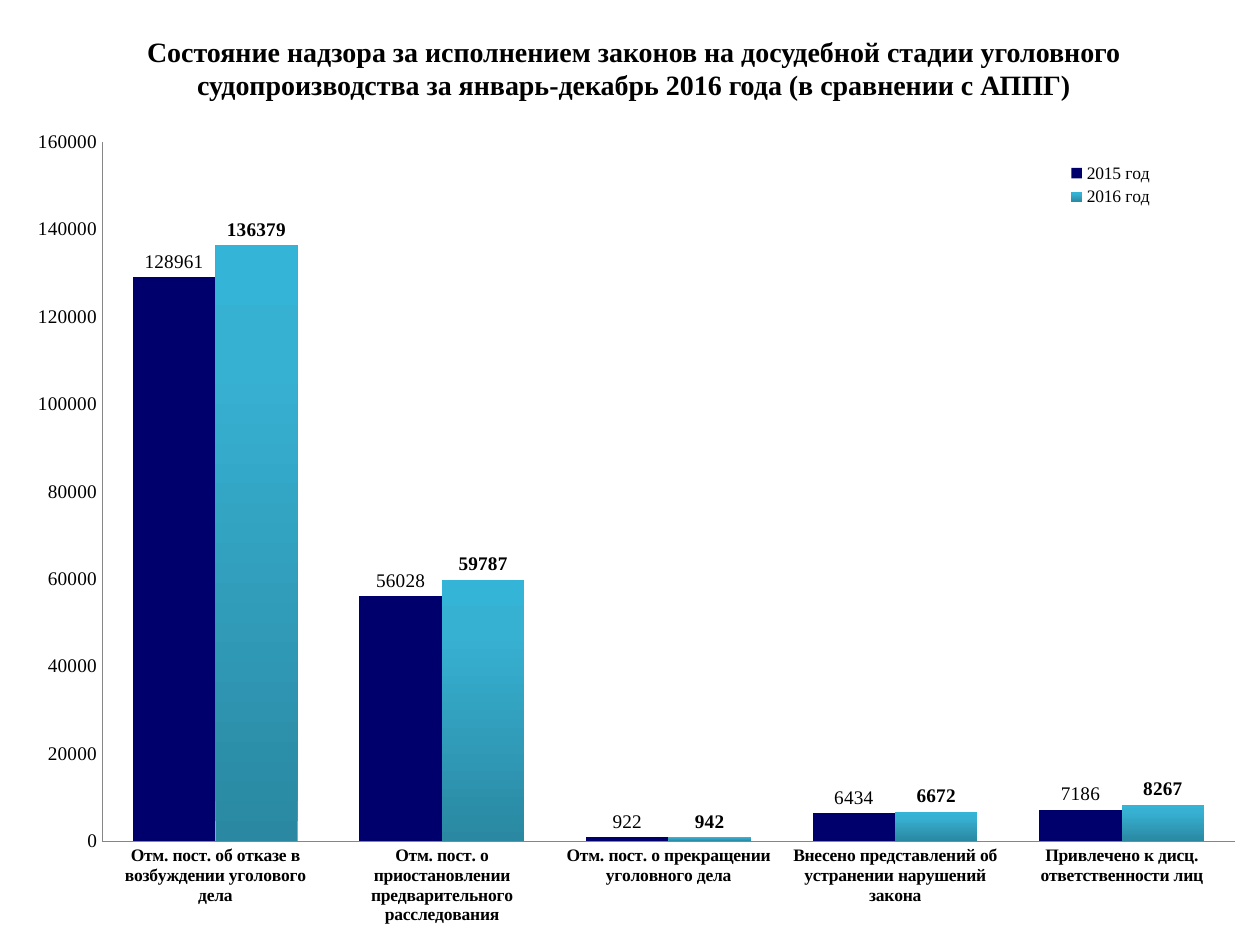
"""Builds a one-slide report comparing 2015 and 2016 supervision figures."""
from copy import deepcopy

from lxml import etree
from pptx import Presentation
from pptx.chart.data import CategoryChartData
from pptx.dml.color import RGBColor
from pptx.enum.chart import XL_CHART_TYPE, XL_LABEL_POSITION, XL_LEGEND_POSITION, XL_TICK_MARK
from pptx.enum.text import MSO_ANCHOR, MSO_AUTO_SIZE, PP_ALIGN
from pptx.oxml.ns import qn
from pptx.util import Cm, Pt

COLUMNS = XL_CHART_TYPE.COLUMN_CLUSTERED
OUTSIDE = XL_LABEL_POSITION.OUTSIDE_END
LEGEND_RIGHT = XL_LEGEND_POSITION.RIGHT
NO_TICKS = XL_TICK_MARK.NONE
TOP = MSO_ANCHOR.TOP
NO_AUTOFIT = MSO_AUTO_SIZE.NONE
CENTER = PP_ALIGN.CENTER

FONT = "Times New Roman"
COLORS = {
    "text": "000000",
    "axis": "868686",
    "2015": "00006C",
    "2016 bottom": "2A88A2",
    "2016 middle": "37B1D2",
    "2016 top": "34B4D6",
}
TITLE = (
    "Состояние надзора за исполнением законов на досудебной стадии уголовного "
    "судопроизводства за январь-декабрь 2016 года (в сравнении с АППГ)"
)
CATEGORIES = [
    "Отм. пост. об отказе в возбуждении уголового дела",
    "Отм. пост. о приостановлении предварительного расследования",
    "Отм. пост. о прекращении уголовного дела",
    "Внесено представлений об устранении нарушений закона",
    "Привлечено к дисц. ответственности лиц",
]
SERIES = {
    "2015 год": [128961, 56028, 922, 6434, 7186],
    "2016 год": [136379, 59787, 942, 6672, 8267],
}


def color(name):
    return RGBColor.from_string(COLORS[name])


class SlideBuilder:
    """Holds the text style and the current slide."""

    def __init__(self, presentation):
        self.slide = presentation.slides.add_slide(presentation.slide_layouts[5])

    def style(self, font, size, bold=False):
        font.name = FONT
        font.size = Pt(size)
        font.bold = bold
        font.color.rgb = color("text")

    def title(self, text, left, top, width, height):
        shape = self.slide.shapes.title
        shape.left, shape.top, shape.width, shape.height = map(Cm, (left, top, width, height))
        frame = shape.text_frame
        frame.text = text
        frame.word_wrap = True
        frame.auto_size = NO_AUTOFIT
        frame.vertical_anchor = TOP
        paragraph = frame.paragraphs[0]
        paragraph.alignment = CENTER
        self.style(paragraph.font, 16, bold=True)

    def column_chart(self, categories, series, left, top, width, height):
        data = CategoryChartData()
        data.categories = categories
        for name, values in series.items():
            data.add_series(name, values)
        frame = self.slide.shapes.add_chart(COLUMNS, *map(Cm, (left, top, width, height)), data)
        chart = frame.chart
        chart.has_title = False
        self.style(chart.font, 11)
        plot = chart.plots[0]
        plot.gap_width = 75
        plot.overlap = 0
        plot.vary_by_categories = False
        return chart

    def axis(self, axis, size, bold=False):
        axis.has_major_gridlines = False
        axis.major_tick_mark = axis.minor_tick_mark = NO_TICKS
        axis.format.line.color.rgb = color("axis")
        axis.format.line.width = Pt(0.25)
        self.style(axis.tick_labels.font, size, bold)

    def legend(self, chart, size):
        chart.has_legend = True
        chart.legend.position = LEGEND_RIGHT
        chart.legend.include_in_layout = False
        self.style(chart.legend.font, size)

    def value_labels(self, series, bold=False):
        labels = series.data_labels
        labels.show_value = True
        labels.position = OUTSIDE
        self.style(labels.font, 11, bold)

    def gradient(self, series, stops):
        fill = series.format.fill
        fill.gradient()
        fill.gradient_angle = 90
        stop_list = next(series.format.fill._xPr.iter(qn("a:gsLst")))
        while len(stop_list) < len(stops):
            stop_list.append(deepcopy(stop_list[0]))
        for stop, (position, name) in zip(fill.gradient_stops, stops):
            stop.position = position
            stop.color.rgb = color(name)

    def layout(self, parent, index, inner=False, **fractions):
        for existing in parent.findall(qn("c:layout")):
            parent.remove(existing)
        layout = etree.Element(qn("c:layout"))
        manual = etree.SubElement(layout, qn("c:manualLayout"))
        settings = {"layoutTarget": "inner"} if inner else {}
        settings.update(xMode="edge", yMode="edge", **fractions)
        for tag, value in settings.items():
            etree.SubElement(manual, qn(f"c:{tag}")).set("val", str(value))
        parent.insert(index, layout)


def main():
    presentation = Presentation()
    presentation.slide_width = Cm(25.4)
    presentation.slide_height = Cm(19.05)
    builder = SlideBuilder(presentation)
    builder.title(TITLE, 1.35, 0.56, 22.86, 2.36)

    chart = builder.column_chart(CATEGORIES, SERIES, 0.3, 2.34, 25.1, 17.4)
    builder.axis(chart.category_axis, 10, bold=True)
    builder.axis(chart.value_axis, 11)
    chart.value_axis.minimum_scale = 0
    chart.value_axis.maximum_scale = 160000
    chart.value_axis.major_unit = 20000
    builder.legend(chart, 10)

    previous, current = chart.plots[0].series
    previous.format.fill.solid()
    previous.format.fill.fore_color.rgb = color("2015")
    stops = [(0, "2016 bottom"), (0.8, "2016 middle"), (1, "2016 top")]
    builder.gradient(current, stops)
    builder.value_labels(previous)
    builder.value_labels(current, bold=True)

    plot_area = next(chart.element.iter(qn("c:plotArea")))
    legend = next(chart.element.iter(qn("c:legend")))
    builder.layout(plot_area, 0, inner=True, x=0.07, y=0.03, w=0.91, h=0.81)
    builder.layout(legend, 1, x=0.83, y=0.05, w=0.1, h=0.06)
    presentation.save("out.pptx")


if __name__ == "__main__":
    main()
